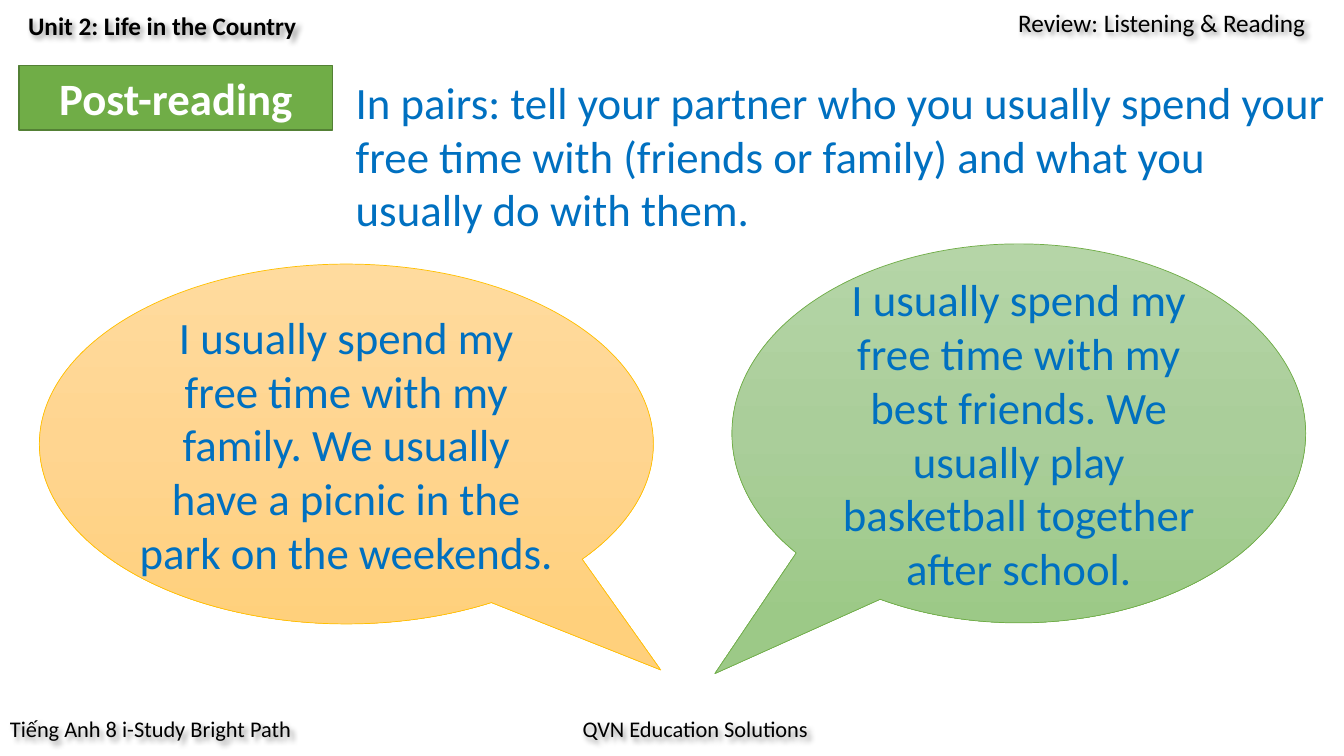
"""Build a post-reading speaking slide with two speech bubbles."""
from copy import deepcopy

from pptx import Presentation
from pptx.dml.color import RGBColor
from pptx.enum.shapes import MSO_SHAPE
from pptx.enum.text import MSO_ANCHOR, MSO_AUTO_SIZE, PP_ALIGN
from pptx.oxml import parse_xml
from pptx.oxml.ns import nsdecls, qn
from pptx.util import Inches, Pt

BLUE, BLACK, WHITE = "0070C0", "000000", "FFFFFF"
LABELS = [
    ("Review: Listening & Reading", (10, 0.02, 3.22, 0.4), 18, False, True),
    ("Unit 2: Life in the Country", (0.18, 0.05, 2.89, 0.4), 18, True, False),
    ("Tiếng Anh 8 i-Study Bright Path", (0, 7.05, 3.21, 0.37), 16, False, False),
    ("QVN Education Solutions", (5.68, 7.05, 2.46, 0.37), 16, False, False),
]
TITLE = ("Post-reading", (0.19, 0.65, 3.11, 0.64))
TASK = (
    "In pairs: tell your partner who you usually spend your free time with "
    "(friends or family) and what you usually do with them.",
    (3.43, 0.69, 9.9, 1.72),
)
BUBBLES = [
    {
        "text": "I usually spend my free time with my family. "
                "We usually have a picnic in the park on the weekends.",
        "box": (0.39, 2.62, 6.09, 3.57),
        "tail": (0.512, 0.628),
        "gradient": ("FFDB9E", "FFD590", "FFD07C"),
        "line": "FFC000",
    },
    {
        "text": "I usually spend my free time with my best friends. "
                "We usually play basketball together after school.",
        "box": (7.26, 2.42, 5.69, 3.76),
        "tail": (-0.53, 0.634),
        "gradient": ("B5D5A7", "AACE9A", "9CC987"),
        "line": "70AD47",
    },
]
SHADOW = (
    f'<a:effectLst {nsdecls("a")}><a:outerShdw blurRad="50800" dist="38100" '
    'dir="2700000" algn="tl" rotWithShape="0"><a:prstClr val="black">'
    '<a:alpha val="40000"/></a:prstClr></a:outerShdw></a:effectLst>'
)


def rgb(value):
    """Turn a hex string into a colour."""
    return RGBColor.from_string(value)


def inches(box):
    """Turn a box in inches into lengths."""
    return [Inches(value) for value in box]


def write(shape, text, size, color, bold=False, align=PP_ALIGN.LEFT,
          anchor=MSO_ANCHOR.TOP, wrap=True):
    """Put one formatted paragraph into a shape."""
    frame = shape.text_frame
    frame.text = text
    paragraph = frame.paragraphs[0]
    paragraph.font.color.rgb = rgb(color)
    formats = [
        (frame, {"word_wrap": wrap, "vertical_anchor": anchor,
                 "auto_size": MSO_AUTO_SIZE.NONE}),
        (paragraph, {"alignment": align}),
        (paragraph.font, {"name": "Calibri", "size": Pt(size), "bold": bold}),
    ]
    for target, values in formats:
        for name, value in values.items():
            setattr(target, name, value)


def outline(shape, color, width):
    """Draw the edge of a shape."""
    shape.line.color.rgb = rgb(color)
    shape.line.width = Pt(width)


def add_label(slide, text, box, size, bold, wrap):
    """Add a shadowed header or footer label."""
    label = slide.shapes.add_textbox(*inches(box))
    write(label, text, size, BLACK, bold, wrap=wrap)
    label._element.spPr.append(parse_xml(SHADOW))


def add_title(slide, text, box):
    """Format the title as a green tag."""
    title = slide.shapes.title
    title.left, title.top, title.width, title.height = inches(box)
    title.fill.solid()
    title.fill.fore_color.rgb = rgb("70AD47")
    outline(title, "538035", 1)
    write(title, text, 32, WHITE, True, PP_ALIGN.CENTER, MSO_ANCHOR.MIDDLE)


def add_bubble(slide, bubble):
    """Add a speech bubble with a three-colour gradient."""
    shape = slide.shapes.add_shape(MSO_SHAPE.OVAL_CALLOUT, *inches(bubble["box"]))
    shape.shadow.inherit = False
    for index, value in enumerate(bubble["tail"]):
        shape.adjustments[index] = value
    shape.fill.gradient()
    shape.fill.gradient_angle = 270
    stops = shape._element.spPr.find(qn("a:gradFill")).find(qn("a:gsLst"))
    middle = deepcopy(stops[0])
    middle.set("pos", "50000")
    stops.insert(1, middle)
    for stop, color in zip(shape.fill.gradient_stops, bubble["gradient"]):
        stop.color.rgb = rgb(color)
    outline(shape, bubble["line"], 0.5)
    write(shape, bubble["text"], 32, BLUE, align=PP_ALIGN.CENTER,
          anchor=MSO_ANCHOR.MIDDLE)


def main():
    """Assemble and save the slide."""
    presentation = Presentation()
    presentation.slide_width = Inches(13.33)
    presentation.slide_height = Inches(7.5)
    slide = presentation.slides.add_slide(presentation.slide_layouts[5])
    for label in LABELS:
        add_label(slide, *label)
    add_title(slide, *TITLE)
    text, box = TASK
    write(slide.shapes.add_textbox(*inches(box)), text, 32, BLUE)
    for bubble in BUBBLES:
        add_bubble(slide, bubble)
    presentation.save("out.pptx")


if __name__ == "__main__":
    main()
